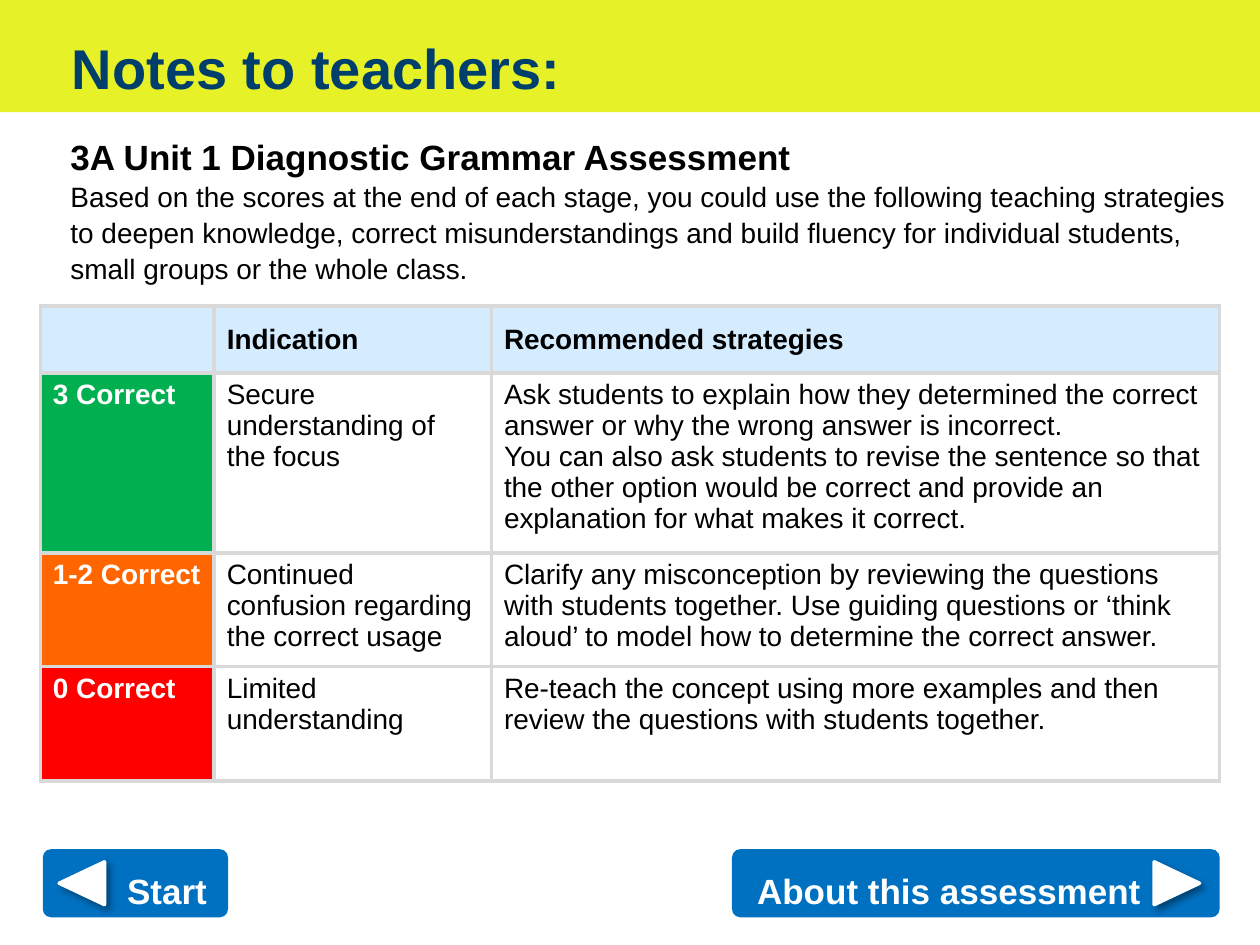
from lxml.etree import SubElement
from pptx import Presentation
from pptx.dml.color import RGBColor
from pptx.enum.shapes import MSO_SHAPE
from pptx.enum.text import MSO_ANCHOR, PP_ALIGN
from pptx.oxml.ns import qn
from pptx.util import Inches, Pt

TITLE = "Notes to teachers:"
HEADING = "3A Unit 1 Diagnostic Grammar Assessment"
INTRODUCTION = (
    "Based on the scores at the end of each stage, you could use the following teaching "
    "strategies to deepen knowledge, correct misunderstandings and build fluency for "
    "individual students, small groups or the whole class."
)
HEADERS = ["", "Indication", "Recommended strategies"]
RESULTS = [
    ("3 Correct", "00B050", "Secure understanding of the focus", [
        "Ask students to explain how they determined the correct answer or why the wrong "
        "answer is incorrect.",
        "You can also ask students to revise the sentence so that the other option would be "
        "correct and provide an explanation for what makes it correct.",
    ]),
    ("1-2 Correct", "FF6600", "Continued confusion regarding the correct usage", [
        "Clarify any misconception by reviewing the questions with students together. Use "
        "guiding questions or ‘think aloud’ to model how to determine the correct answer.",
    ]),
    ("0 Correct", "FF0000", "Limited understanding", [
        "Re-teach the concept using more examples and then review the questions with "
        "students together.",
    ]),
]
COLUMN_WIDTHS = [1.38, 2.2, 5.78]
ROW_HEIGHTS = [0.53, 1.43, 0.9, 0.91]
BUTTONS = [
    {"text": "About this assessment", "left": 5.81, "width": 3.87,
     "indent": 0.18, "arrow_left": 9.17, "rotation": 90},
    {"text": "Start", "left": 0.34, "width": 1.47,
     "indent": 0.65, "arrow_left": 0.48, "rotation": 270},
]


def color(value):
    """Turn a hex string into a colour."""
    return RGBColor.from_string(value)


def write(frame, text, size=16, fill="000000", bold=False, spacing=None, first=True):
    """Write one formatted paragraph into a text frame."""
    para = frame.paragraphs[0] if first else frame.add_paragraph()
    para.alignment = PP_ALIGN.LEFT
    if spacing:
        para.line_spacing = spacing
    span = para.add_run()
    span.text = text
    span.font.name = "Arial"
    span.font.size = Pt(size)
    span.font.bold = bold
    span.font.color.rgb = color(fill)


def add_text_box(page, left, top, width, height):
    """Add a wrapping text box without insets and return its frame."""
    box = page.shapes.add_textbox(Inches(left), Inches(top), Inches(width), Inches(height))
    frame = box.text_frame
    frame.word_wrap = True
    frame.margin_left = frame.margin_right = frame.margin_top = frame.margin_bottom = 0
    return frame


def add_filled_shape(shapes, kind, left, top, width, height, fill):
    """Add a preset shape with a plain fill, no line and no shadow."""
    shape = shapes.add_shape(kind, Inches(left), Inches(top), Inches(width), Inches(height))
    shape.shadow.inherit = False
    shape.fill.solid()
    shape.fill.fore_color.rgb = color(fill)
    shape.line.fill.background()
    return shape


def add_shadow(shape):
    """Give a shape a soft shadow to the lower right."""
    effects = shape._element.spPr.find(qn("a:effectLst"))
    shadow = SubElement(effects, qn("a:outerShdw"), blurRad=str(Pt(4)), dist=str(Pt(3)),
                        dir=str(45 * 60000), algn="tl", rotWithShape="0")
    shade = SubElement(shadow, qn("a:srgbClr"), val="000000")
    SubElement(shade, qn("a:alpha"), val="40000")


def format_cell(cell, fill):
    """Give a cell its grey borders and its fill."""
    properties = cell._tc.get_or_add_tcPr()
    for side in ("lnL", "lnR", "lnT", "lnB"):
        border = SubElement(properties, qn(f"a:{side}"), w=str(Pt(2.25)))
        solid = SubElement(border, qn("a:solidFill"))
        SubElement(solid, qn("a:srgbClr"), val="D9D9D9")
    cell.fill.solid()
    cell.fill.fore_color.rgb = color(fill)


def add_results_table(page):
    """Add the table of scores, indications and strategies."""
    table = page.shapes.add_table(
        len(ROW_HEIGHTS), len(COLUMN_WIDTHS), Inches(0.32), Inches(2.43),
        Inches(sum(COLUMN_WIDTHS)), Inches(sum(ROW_HEIGHTS))).table
    for column, width in zip(table.columns, COLUMN_WIDTHS):
        column.width = Inches(width)
    for row, height in zip(table.rows, ROW_HEIGHTS):
        row.height = Inches(height)
    for cell, header in zip(table.rows[0].cells, HEADERS):
        format_cell(cell, "D5ECFF")
        cell.vertical_anchor = MSO_ANCHOR.MIDDLE
        if header:
            write(cell.text_frame, header, bold=True)
    for number, (score, fill, indication, strategies) in enumerate(RESULTS, 1):
        score_cell, indication_cell, strategy_cell = table.rows[number].cells
        format_cell(score_cell, fill)
        format_cell(indication_cell, "FFFFFF")
        format_cell(strategy_cell, "FFFFFF")
        write(score_cell.text_frame, score, fill="FFFFFF", bold=True)
        write(indication_cell.text_frame, indication)
        for index, strategy in enumerate(strategies):
            write(strategy_cell.text_frame, strategy, first=index == 0)


def add_button(page, text, left, width, indent, arrow_left, rotation):
    """Add a grouped button with its label and arrow."""
    shapes = page.shapes.add_group_shape().shapes
    button = add_filled_shape(shapes, MSO_SHAPE.ROUNDED_RECTANGLE,
                              left, 6.74, width, 0.54, "0070C0")
    button.adjustments[0] = 0.12
    frame = button.text_frame
    frame.word_wrap = True
    frame.vertical_anchor = MSO_ANCHOR.MIDDLE
    frame.margin_left = Inches(indent)
    write(frame, text, size=20, fill="FFFFFF", bold=True, spacing=Pt(32))
    arrow = add_filled_shape(shapes, MSO_SHAPE.ISOSCELES_TRIANGLE,
                             arrow_left, 6.83, 0.34, 0.36, "FFFFFF")
    arrow.rotation = rotation
    arrow.line.color.rgb = color("FFFFFF")
    arrow.line.width = Pt(2)
    add_shadow(arrow)


def main():
    """Build the slide and save it."""
    deck = Presentation()
    deck.slide_width, deck.slide_height = Inches(10), Inches(7.5)
    page = deck.slides.add_slide(deck.slide_layouts[6])
    add_results_table(page)
    body = add_text_box(page, 0.56, 0.91, 9.17, 1.47)
    write(body, HEADING, size=20, bold=True, spacing=1.5)
    write(body, INTRODUCTION, spacing=1.07, first=False)
    add_filled_shape(page.shapes, MSO_SHAPE.RECTANGLE, 0, 0, 10, 0.89, "E7F127")
    title = add_text_box(page, 0.57, 0.24, 6.88, 0.85)
    write(title, TITLE, size=32, fill="003E6C", bold=True, spacing=Pt(40))
    for button in BUTTONS:
        add_button(page, **button)
    deck.save("out.pptx")


if __name__ == "__main__":
    main()
